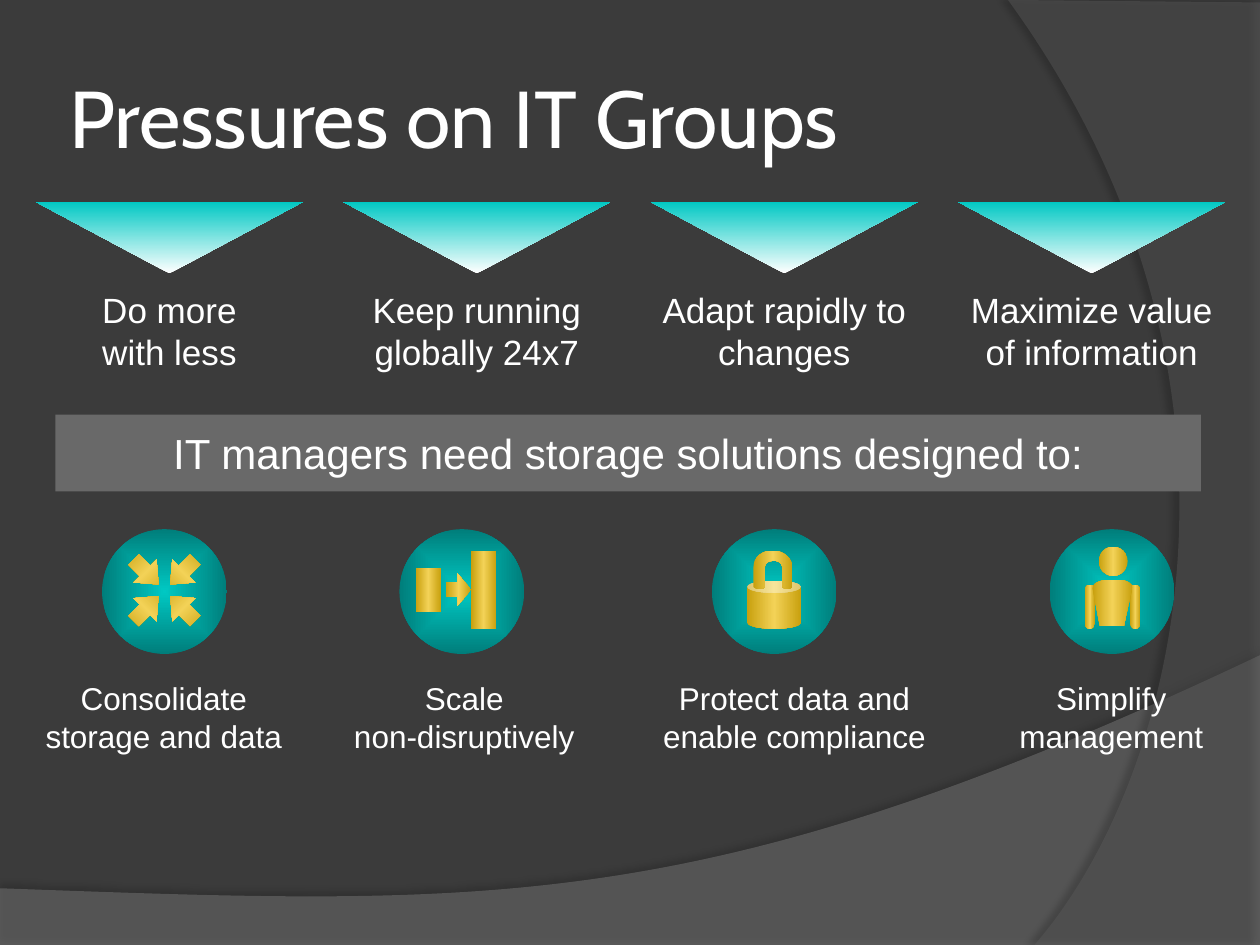
from lxml import etree
from pptx import Presentation
from pptx.dml.color import RGBColor
from pptx.enum.shapes import MSO_SHAPE
from pptx.enum.text import MSO_ANCHOR, MSO_AUTO_SIZE, PP_ALIGN
from pptx.oxml import parse_xml
from pptx.oxml.ns import nsdecls, qn
from pptx.util import Inches, Pt

LEFT, CENTER = PP_ALIGN.LEFT, PP_ALIGN.CENTER
TOP, MIDDLE = MSO_ANCHOR.TOP, MSO_ANCHOR.MIDDLE
GROW = MSO_AUTO_SIZE.SHAPE_TO_FIT_TEXT
RECT, OVAL, CAN = MSO_SHAPE.RECTANGLE, MSO_SHAPE.OVAL, MSO_SHAPE.CAN
PILL, TRIANGLE = MSO_SHAPE.ROUNDED_RECTANGLE, MSO_SHAPE.ISOSCELES_TRIANGLE
TO_LEFT, TO_RIGHT = MSO_SHAPE.LEFT_ARROW, MSO_SHAPE.RIGHT_ARROW

DARK = RGBColor(0x3B, 0x3B, 0x3B)
WAVE = RGBColor(0x7F, 0x7F, 0x7F)
ARC = RGBColor(0x5E, 0x5E, 0x5E)
BAND = RGBColor(0x69, 0x69, 0x69)
WHITE = RGBColor(0xFF, 0xFF, 0xFF)
TEAL = RGBColor(0x00, 0xC8, 0xC3)
DEEP_TEAL = RGBColor(0x00, 0x7E, 0x7B)
OCHRE = RGBColor(0xC8, 0xA0, 0x0E)
GOLD = RGBColor(0xF3, 0xD2, 0x57)
BLACK = RGBColor(0, 0, 0)

WIDTH, HEIGHT = 10, 7.5
TITLE = "Pressures on IT Groups"
BANNER = "IT managers need storage solutions designed to:"
PRESSURES = ["Do more\nwith less", "Keep running\nglobally 24x7",
             "Adapt rapidly to changes", "Maximize value of information"]

BACKDROP = [
    ([(0, 7.05), (0, 7.51), (10, 7.51), (10, 5.2), (5.59, 7.29, 3.91, 7.19, 0, 7.05)],
     WAVE, 45, {"alpha": 35, "distance": 3.5, "direction": 270}),
    ([(10, 0.02), (10, 7.5), (8.21, 7.5), (9.35, 6.19, 10.18, 3, 8, 0)],
     ARC, 40, {"alpha": 45, "distance": 4, "direction": 180}),
]

SHACKLE = [(0.33, 0.46), (0.33, 0.3), (0.33, 0.22, 0.4, 0.17, 0.48, 0.17),
           (0.57, 0.17, 0.64, 0.23, 0.64, 0.3), (0.64, 0.46),
           (0.62, 0.48, 0.58, 0.48, 0.56, 0.46), (0.56, 0.3),
           (0.55, 0.26, 0.52, 0.25, 0.49, 0.25),
           (0.45, 0.25, 0.42, 0.27, 0.42, 0.3), (0.42, 0.46),
           (0.4, 0.48, 0.36, 0.48, 0.33, 0.46)]
TORSO = [(0.34, 0.47), (0.34, 0.41, 0.45, 0.4, 0.5, 0.4),
         (0.55, 0.4, 0.64, 0.4, 0.66, 0.46),
         (0.62, 0.62, 0.59, 0.77, 0.59, 0.77), (0.4, 0.77)]
INWARD = (0.45, 0.59)

SOLUTIONS = [
    {"label": "Consolidate\nstorage and data", "box": (0.2, 2.2), "disc": 0.81, "wrap": False,
     "parts": [(TO_LEFT, (0.5, 0.21, 0.28, 0.26), INWARD, 315),
               (TO_RIGHT, (0.21, 0.21, 0.28, 0.26), INWARD, 45),
               (TO_LEFT, (0.5, 0.5, 0.28, 0.26), INWARD, 45),
               (TO_RIGHT, (0.21, 0.5, 0.28, 0.26), INWARD, 315)], "outlines": []},
    {"label": "Protect data and enable compliance", "box": (5.03, 2.55), "disc": 5.65, "wrap": True,
     "parts": [(CAN, (0.28, 0.41, 0.43, 0.38), (0.25,), 0)], "outlines": [SHACKLE]},
    {"label": "Scale\nnon-disruptively", "box": (2.61, 2.15), "disc": 3.17, "wrap": False,
     "parts": [(RECT, (0.13, 0.31, 0.2, 0.35), (), 0),
               (TO_RIGHT, (0.37, 0.35, 0.2, 0.26), (0.45, 0.55), 0),
               (RECT, (0.57, 0.17, 0.2, 0.62), (), 0)], "outlines": []},
    {"label": "Simplify\nmanagement", "box": (7.95, 1.74), "disc": 8.33, "wrap": False,
     "parts": [(OVAL, (0.39, 0.14, 0.23, 0.23), (), 0),
               (PILL, (0.28, 0.44, 0.08, 0.35), (0.5,), 0),
               (PILL, (0.64, 0.44, 0.08, 0.35), (0.5,), 0)], "outlines": [TORSO]},
]
COLUMN_LEFT, COLUMN_STEP = 0.2, 2.44
DISC_TOP, DISC_SIZE = 4.2, 0.99


def gradient(shape, colors, angle=None):
    properties = shape.element.spPr
    stops = "".join(f'<a:gs pos="{100000 * i // (len(colors) - 1)}"><a:srgbClr val="{c}"/></a:gs>'
                    for i, c in enumerate(colors))
    if angle is None:
        course = ('<a:path path="shape"><a:fillToRect l="50000" t="50000" '
                  'r="50000" b="50000"/></a:path>')
    else:
        course = f'<a:lin ang="{angle * 60000}" scaled="1"/>'
    shape.fill.background()
    blank = properties.find(qn("a:noFill"))
    properties.replace(blank, parse_xml(
        f'<a:gradFill {nsdecls("a")} rotWithShape="1"><a:gsLst>{stops}</a:gsLst>{course}</a:gradFill>'))


def plain(shape):
    shape.shadow.inherit = False
    shape.line.fill.background()
    return shape


def add_preset(shapes, kind, place, adjustments=(), rotation=0):
    shape = plain(shapes.add_shape(kind, *map(Inches, place)))
    for i, value in enumerate(adjustments):
        shape.adjustments[i] = value
    shape.rotation = rotation
    return shape


def add_outline(shapes, steps, left=0, top=0):
    spots = [(Inches(left + step[-2]), Inches(top + step[-1])) for step in steps]
    builder = shapes.build_freeform(*spots[0])
    builder.add_line_segments(spots[1:], close=spots[0] != spots[-1])
    shape = plain(builder.convert_to_shape())
    lines = list(shape.element.iter(qn("a:lnTo")))
    for line, step in zip(lines, steps[1:]):
        if len(step) == 6:
            line.tag = qn("a:cubicBezTo")
            for i in (0, 2):
                x = Inches(left + step[i]) - shape.left
                y = Inches(top + step[i + 1]) - shape.top
                line.insert(i // 2, parse_xml(f'<a:pt {nsdecls("a")} x="{x}" y="{y}"/>'))
    return shape


def add_backdrop(shapes, steps, color, opacity, shadow):
    shape = add_outline(shapes, steps)
    shape.fill.solid()
    shape.fill.fore_color.rgb = color
    tone = shape.element.spPr.find(qn("a:solidFill"))[0]
    etree.SubElement(tone, qn("a:alpha"), val=str(opacity * 1000))
    effects = shape.element.spPr.find(qn("a:effectLst"))
    effects.append(parse_xml(
        f'<a:outerShdw {nsdecls("a")} blurRad="{Pt(4)}" dist="{Pt(shadow["distance"])}" '
        f'dir="{shadow["direction"] * 60000}" algn="ctr" rotWithShape="0"><a:srgbClr val="{BLACK}">'
        f'<a:alpha val="{shadow["alpha"] * 1000}"/></a:srgbClr></a:outerShdw>'))


def write(box, text, size, font="Arial", align=CENTER, **frame_format):
    frame = box.text_frame
    for name, value in {"word_wrap": True, "vertical_anchor": MIDDLE, **frame_format}.items():
        setattr(frame, name, value)
    para = frame.paragraphs[0]
    para.text = text.replace("\n", "\v")
    para.alignment = align
    for span in para.runs:
        for name, value in {"size": Pt(size), "name": font}.items():
            setattr(span.font, name, value)
        span.font.color.rgb = WHITE


def add_text(shapes, place, text, size, **formats):
    write(shapes.add_textbox(*map(Inches, place)), text, size, **formats)


def add_pressure(shapes, column, text):
    left = COLUMN_LEFT + column * COLUMN_STEP
    add_text(shapes, (left - 0.01, 2.13, 2.31, 0.99), text, 20)
    pointer = add_preset(shapes, TRIANGLE, (left + 0.08, 1.6, 2.13, 0.57))
    pointer.element.spPr.xfrm.set("flipV", "1")
    gradient(pointer, (WHITE, TEAL), 90)


def add_solution(page, item):
    left, width = item["box"]
    shapes = page.shapes.add_group_shape().shapes
    disc = add_preset(shapes, OVAL, (item["disc"], DISC_TOP, DISC_SIZE, DISC_SIZE))
    gradient(disc, (TEAL, DEEP_TEAL))
    icon = [add_preset(shapes, kind, (item["disc"] + x, DISC_TOP + y, w, h), adjustments, rotation)
            for kind, (x, y, w, h), adjustments, rotation in item["parts"]]
    icon += [add_outline(shapes, steps, item["disc"], DISC_TOP) for steps in item["outlines"]]
    for shape in icon:
        gradient(shape, (OCHRE, GOLD, OCHRE), 0)
    add_text(shapes, (left, 5.34, width, 0.7), item["label"], 18,
             word_wrap=item["wrap"], vertical_anchor=TOP, auto_size=GROW)


def main():
    deck = Presentation()
    deck.slide_width, deck.slide_height = Inches(WIDTH), Inches(HEIGHT)
    page = deck.slides.add_slide(deck.slide_layouts[6])
    page.background.fill.solid()
    page.background.fill.fore_color.rgb = DARK
    for backdrop in BACKDROP:
        add_backdrop(page.shapes, *backdrop)
    inset = Inches(0.05)
    add_text(page.shapes, (0.5, 0.3, 8.17, 1.25), TITLE, 46, font="Cabin", align=LEFT,
             margin_left=inset, margin_right=inset)
    for column, text in enumerate(PRESSURES):
        add_pressure(page.shapes, column, text)
    banner = add_preset(page.shapes, RECT, (0.44, 3.29, 9.09, 0.61))
    banner.fill.solid()
    banner.fill.fore_color.rgb = BAND
    write(banner, BANNER, 24, word_wrap=False)
    for item in SOLUTIONS:
        add_solution(page, item)
    deck.save("out.pptx")


if __name__ == "__main__":
    main()
